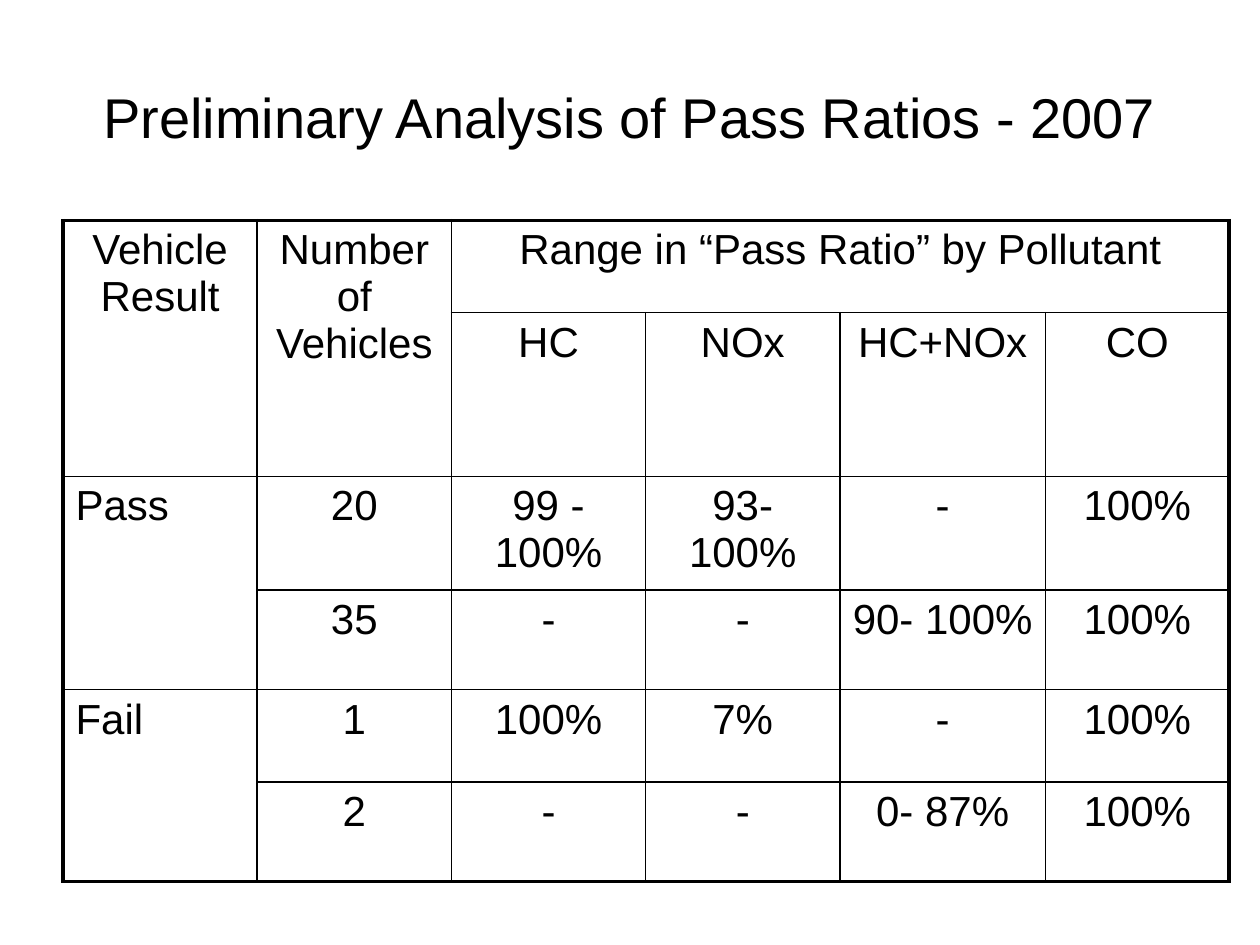
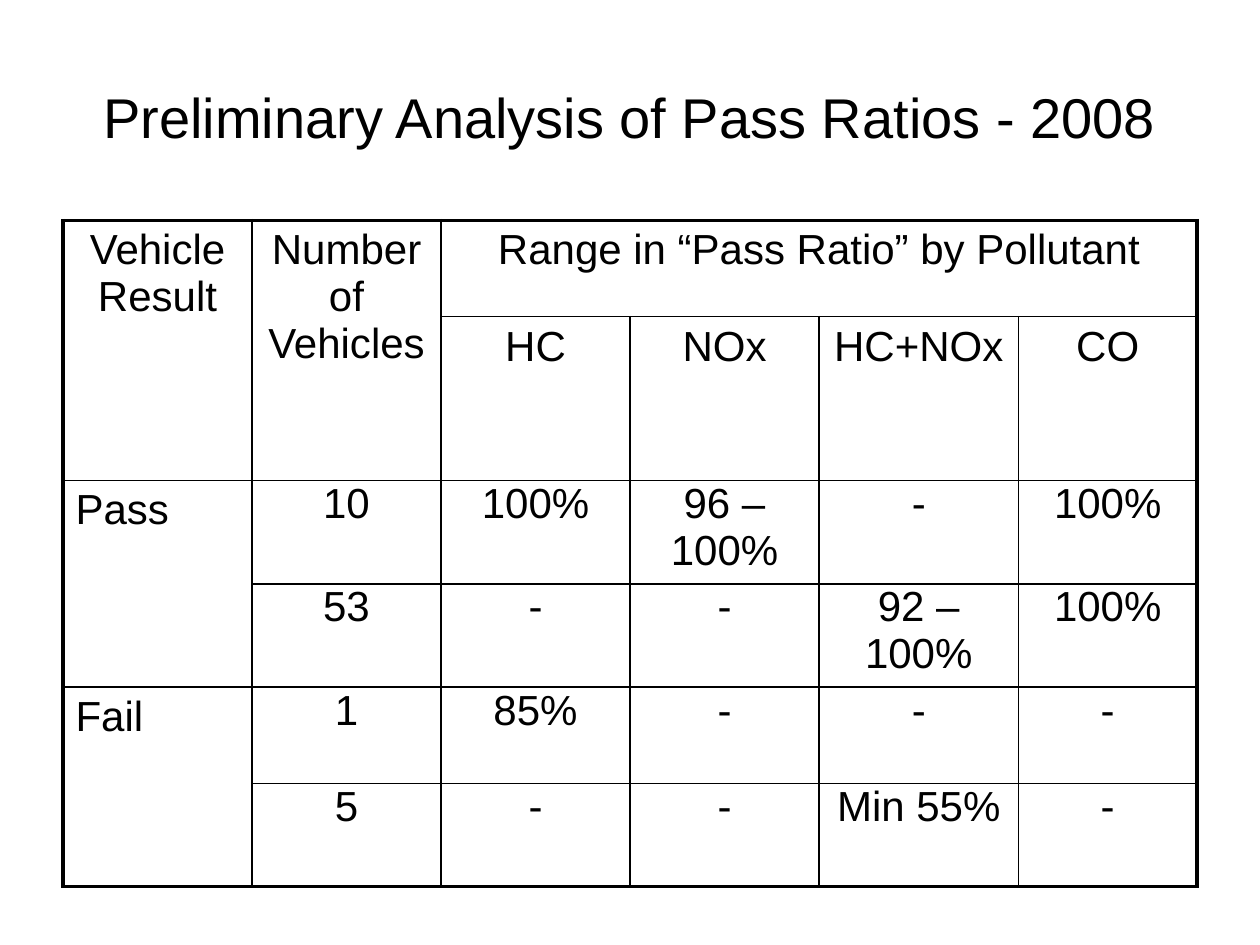
"""Build two slides that tabulate vehicle pass ratios by pollutant."""
from lxml.etree import SubElement
from pptx import Presentation
from pptx.dml.color import RGBColor
from pptx.enum.text import MSO_ANCHOR, PP_ALIGN
from pptx.oxml.ns import qn
from pptx.util import Pt

LEFT, CENTER, MIDDLE = PP_ALIGN.LEFT, PP_ALIGN.CENTER, MSO_ANCHOR.MIDDLE
BLACK = RGBColor(0, 0, 0)
THIN, THICK = 1, 2.25
TITLE = {"name": "Arial", "size": Pt(32)}
BODY = {"name": "Arial", "size": Pt(24)}
TIGHT = dict.fromkeys(("margin_left", "margin_right", "margin_top", "margin_bottom"), 0)
PLAIN = {"first_row": False, "horz_banding": False}

HEAD = [
    ["Vehicle Result", "Number of Vehicles", "Range in “Pass Ratio” by Pollutant", "", "", ""],
    ["", "", "HC", "NOx", "HC+NOx", "CO"],
]
SPANS = [((0, 0), (1, 0)), ((0, 1), (1, 1)), ((0, 2), (0, 5)), ((2, 0), (3, 0)), ((4, 0), (5, 0))]
YEARS = [
    {
        "year": 2007,
        "cols": [111] * 4 + [117.5, 105],
        "rows": [52.7, 64, 57, 57, 52.7, 57],
        "inset": {},
        "data": [
            ["Pass", "20", "99 - 100%", "93- 100%", "-", "100%"],
            ["", "35", "-", "-", "90- 100%", "100%"],
            ["Fail", "1", "100%", "7%", "-", "100%"],
            ["", "2", "-", "-", "0- 87%", "100%"],
        ],
    },
    {
        "year": 2008,
        "cols": [108] * 4 + [114, 102],
        "rows": [55, 67, 59, 59, 55, 59],
        "inset": TIGHT,
        "data": [
            ["Pass", "10", "100%", "96 – 100%", "-", "100%"],
            ["", "53", "-", "-", "92 – 100%", "100%"],
            ["Fail", "1", "85%", "-", "-", "-"],
            ["", "5", "-", "-", "Min 55%", "-"],
        ],
    },
]


def apply(item, style):
    """Set each attribute named in a style."""
    for key, value in style.items():
        setattr(item, key, value)


def write(frame, text, style, align):
    """Put one styled line of text in a frame."""
    para = frame.paragraphs[0]
    para.alignment = align
    run = para.add_run()
    run.text = text
    apply(run.font, style)
    run.font.color.rgb = BLACK


def edge(cell, outer):
    """Rule the four sides of a cell, thick on the outer ones."""
    props = cell._tc.get_or_add_tcPr()
    for side, thick in outer.items():
        width = Pt(THICK if thick else THIN)
        line = SubElement(props, qn(f"a:ln{side}"), w=str(width))
        fill = SubElement(line, qn("a:solidFill"))
        SubElement(fill, qn("a:srgbClr"), val=str(BLACK))


def add_title(slide, text):
    """Add the centred slide title."""
    frame = slide.shapes.add_textbox(Pt(36), Pt(21.6), Pt(648), Pt(90)).text_frame
    apply(frame, {"word_wrap": True, "vertical_anchor": MIDDLE})
    write(frame, text, TITLE, CENTER)


def add_grid(slide, cols, rows, inset, data):
    """Add the ruled table of ratios."""
    high, wide = len(rows), len(cols)
    table = slide.shapes.add_table(
        high, wide, Pt(36), Pt(126), Pt(sum(cols)), Pt(sum(rows))).table
    apply(table, PLAIN)
    for col, width in zip(table.columns, cols):
        col.width = Pt(width)
    for row, height in zip(table.rows, rows):
        row.height = Pt(height)
    for first, last in SPANS:
        table.cell(*first).merge(table.cell(*last))
    for r, line in enumerate(HEAD + data):
        for c, text in enumerate(line):
            cell = table.cell(r, c)
            edge(cell, {"L": c == 0, "R": c + cell.span_width == wide,
                        "T": r == 0, "B": r + cell.span_height == high})
            cell.fill.background()
            label = r >= len(HEAD) and c == 0
            if r >= len(HEAD) and not label:
                apply(cell, inset)
            if text:
                write(cell.text_frame, text, BODY, LEFT if label else CENTER)


def main():
    """Build and save the deck."""
    deck = Presentation()
    apply(deck, {"slide_width": Pt(720), "slide_height": Pt(540)})
    for item in YEARS:
        slide = deck.slides.add_slide(deck.slide_layouts[6])
        add_title(slide, f"Preliminary Analysis of Pass Ratios - {item['year']}")
        add_grid(slide, item["cols"], item["rows"], item["inset"], item["data"])
    deck.save("out.pptx")


if __name__ == "__main__":
    main()
